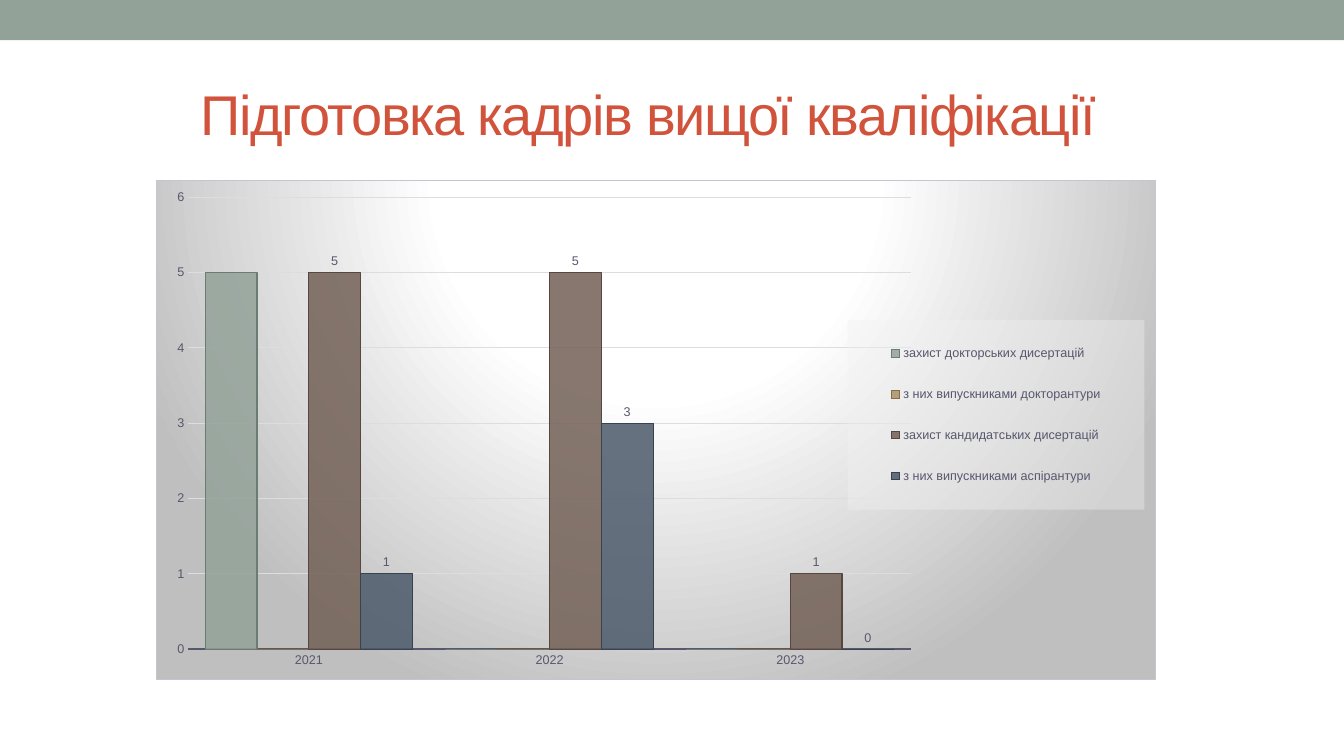
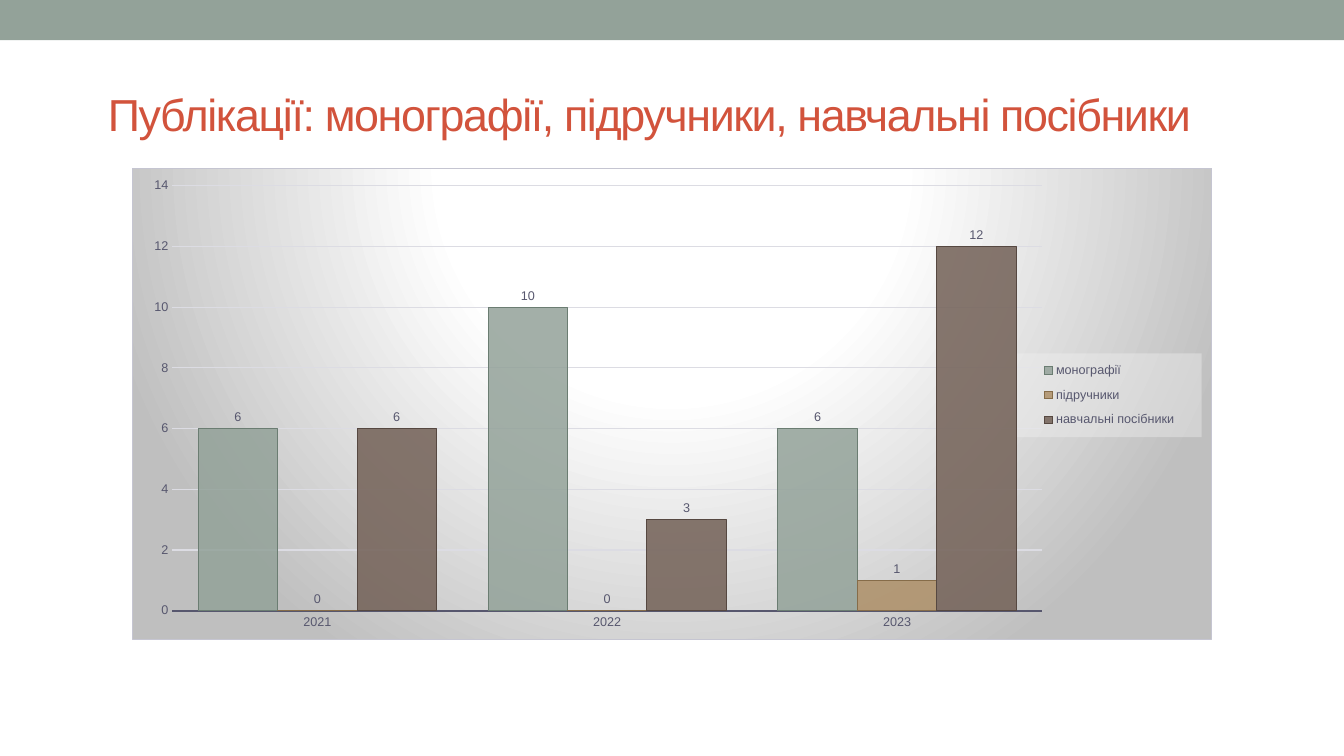
from lxml import etree
from pptx import Presentation
from pptx.chart import data as chart_data
from pptx.dml.color import RGBColor
from pptx.enum import chart as ec, shapes, text
from pptx.oxml import ns
from pptx.util import Pt

FONT = "Arial"
COLORS = {
    "band": "93A299", "title": "D2533C", "chart_text": "57576E", "grid": "DCDCE3",
    "border": "C5C5D1", "light": "FFFFFF", "shade": "BFBFBF", "legend": "F2F2F2",
}
SERIES_STYLES = [  # fill, outline
    ("93A299", "6B7D72"), ("AD8F67", "866C49"), ("726056", "564841"), ("4C5A6A", "394350"),
]
YEARS = ["2021", "2022", "2023"]

# Frames are left, top, width, height in points; plot and legend are fractions of the frame
SLIDES = [
    {
        "title": "Підготовка кадрів вищої кваліфікації", "size": 40, "indent": 88,
        "frame": (111.4, 128.4, 714.3, 357.1), "axis": (6, 1),
        "plot": (0.032, 0.034, 0.723, 0.906), "legend": (0.692, 0.28, 0.297, 0.38),
        "series": [  # name, values, labels shown
            ("захист докторських дисертацій", (5, 0, 0), False),
            ("з них випускниками докторантури", (0, 0, 0), False),
            ("захист кандидатських дисертацій", (5, 5, 1), True),
            ("з них випускниками аспірантури", (1, 3, 0), True),
        ],
    },
    {
        "title": "Публікації: монографії, підручники, навчальні посібники", "size": 32, "indent": 22,
        "frame": (94.3, 120.2, 771.3, 337), "axis": (14, 2),
        "plot": (0.037, 0.036, 0.806, 0.903), "legend": (0.82, 0.392, 0.171, 0.178),
        "series": [
            ("монографії", (6, 10, 6), True),
            ("підручники", (0, 0, 1), True),
            ("навчальні посібники", (6, 3, 12), True),
        ],
    },
]


def rgb(name):
    return RGBColor.from_string(COLORS.get(name, name))


def xml(markup):
    """Parse markup whose root tag carries the chart and drawing namespaces."""
    tag = markup[1:].split(">")[0]
    names = f'xmlns:c="{ns.nsuri("c")}" xmlns:a="{ns.nsuri("a")}"'
    return etree.fromstring(markup.replace(f"<{tag}>", f"<{tag} {names}>", 1))


def style_font(font, size=9, color="chart_text"):
    font.name, font.size, font.bold = FONT, Pt(size), False
    font.color.rgb = rgb(color)


def style_line(line, color, width=0.75):
    line.color.rgb = rgb(color)
    line.width = Pt(width)


def add_text(slide, content, box, size, color, indent=0, spacing=0):
    shape = slide.shapes.add_textbox(*map(Pt, box))
    frame = shape.text_frame
    frame.word_wrap = True
    frame.vertical_anchor = text.MSO_ANCHOR.MIDDLE
    paragraph = frame.paragraphs[0]
    properties = paragraph._p.get_or_add_pPr()
    properties.set("marL", str(Pt(indent)))
    properties.set("indent", "0")
    run = paragraph.add_run()
    run.text = content
    style_font(run.font, size, color)
    run.font._element.set("spc", str(spacing * 100))


def add_band(slide):
    band = slide.shapes.add_shape(shapes.MSO_SHAPE.RECTANGLE, 0, 0, Pt(960), Pt(28.8))
    band.shadow.inherit = False
    band.fill.solid()
    band.fill.fore_color.rgb = rgb("band")
    band.line.fill.background()


def manual_layout(rect, inner=False):
    target = '<c:layoutTarget val="inner"/>' if inner else ""
    modes = "".join(f'<c:{axis}Mode val="edge"/>' for axis in "xy")
    places = "".join(f'<c:{key} val="{value}"/>' for key, value in zip("xywh", rect))
    return xml(f"<c:layout><c:manualLayout>{target}{modes}{places}</c:manualLayout></c:layout>")


def drop_layout(element):
    for old in element.findall(ns.qn("c:layout")):
        element.remove(old)


def place_plot(chart, rect):
    plot_area = chart.element.find(f".//{ns.qn('c:plotArea')}")
    drop_layout(plot_area)
    plot_area.insert(0, manual_layout(rect, inner=True))


def style_background(chart):
    stops = "".join(
        f'<a:gs pos="{position * 1000}"><a:srgbClr val="{COLORS[name]}"/></a:gs>'
        for position, name in ((0, "light"), (39, "light"), (100, "shade")))
    chart.element.find(ns.qn("c:chart")).addnext(xml(
        f'<c:spPr><a:gradFill><a:gsLst>{stops}</a:gsLst><a:path path="circle">'
        '<a:fillToRect l="50000" t="-80000" r="50000" b="180000"/></a:path></a:gradFill>'
        f'<a:ln w="{Pt(0.75)}"><a:solidFill><a:srgbClr val="{COLORS["border"]}"/>'
        "</a:solidFill></a:ln></c:spPr>"))


def style_axes(chart, maximum, step):
    for axis in (chart.category_axis, chart.value_axis):
        axis.major_tick_mark = axis.minor_tick_mark = ec.XL_TICK_MARK.NONE
        style_font(axis.tick_labels.font)
    style_line(chart.category_axis.format.line, "chart_text", 1.5)
    value_axis = chart.value_axis
    value_axis.minimum_scale, value_axis.maximum_scale = 0, maximum
    value_axis.major_unit = step
    value_axis.format.line.fill.background()
    value_axis.has_major_gridlines = True
    style_line(value_axis.major_gridlines.format.line, "grid")


def style_legend(chart, rect):
    chart.has_legend = True
    legend = chart.legend
    legend.position = ec.XL_LEGEND_POSITION.RIGHT
    legend.include_in_layout = False
    style_font(legend.font)
    drop_layout(legend._element)
    overlay = legend._element.find(ns.qn("c:overlay"))
    overlay.addprevious(manual_layout(rect))
    overlay.addnext(xml(
        f'<c:spPr><a:solidFill><a:srgbClr val="{COLORS["legend"]}"><a:alpha val="39000"/>'
        "</a:srgbClr></a:solidFill><a:ln><a:noFill/></a:ln></c:spPr>"))


def style_series(series, fill, outline, labelled):
    series.invert_if_negative = False
    series.format.fill.solid()
    series.format.fill.fore_color.rgb = rgb(fill)
    style_line(series.format.line, outline)
    color = series._element.find("/".join(map(ns.qn, ("c:spPr", "a:solidFill", "a:srgbClr"))))
    etree.SubElement(color, ns.qn("a:alpha")).set("val", "85000")
    if labelled:
        labels = series.data_labels
        labels.show_value = True
        labels.position = ec.XL_LABEL_POSITION.OUTSIDE_END
        style_font(labels.font)


def add_column_chart(slide, content):
    values = chart_data.CategoryChartData(number_format="General")
    values.categories = YEARS
    for name, numbers, _ in content["series"]:
        values.add_series(name, numbers)
    chart = slide.shapes.add_chart(
        ec.XL_CHART_TYPE.COLUMN_CLUSTERED, *map(Pt, content["frame"]), values).chart
    chart.has_title = False
    style_font(chart.font, 10)
    plot = chart.plots[0]
    plot.vary_by_categories = False
    plot.gap_width, plot.overlap = 65, 0
    for series, style, (_, _, labelled) in zip(plot.series, SERIES_STYLES, content["series"]):
        style_series(series, *style, labelled)
    style_axes(chart, *content["axis"])
    style_legend(chart, content["legend"])
    place_plot(chart, content["plot"])
    style_background(chart)


def main():
    presentation = Presentation()
    presentation.slide_width, presentation.slide_height = Pt(960), Pt(540)
    for content in SLIDES:
        slide = presentation.slides.add_slide(presentation.slide_layouts[6])
        add_band(slide)
        add_text(slide, content["title"], (48, 42, 864, 78), content["size"], "title",
                 indent=content["indent"], spacing=-1)
        add_column_chart(slide, content)
    presentation.save("out.pptx")


if __name__ == "__main__":
    main()
